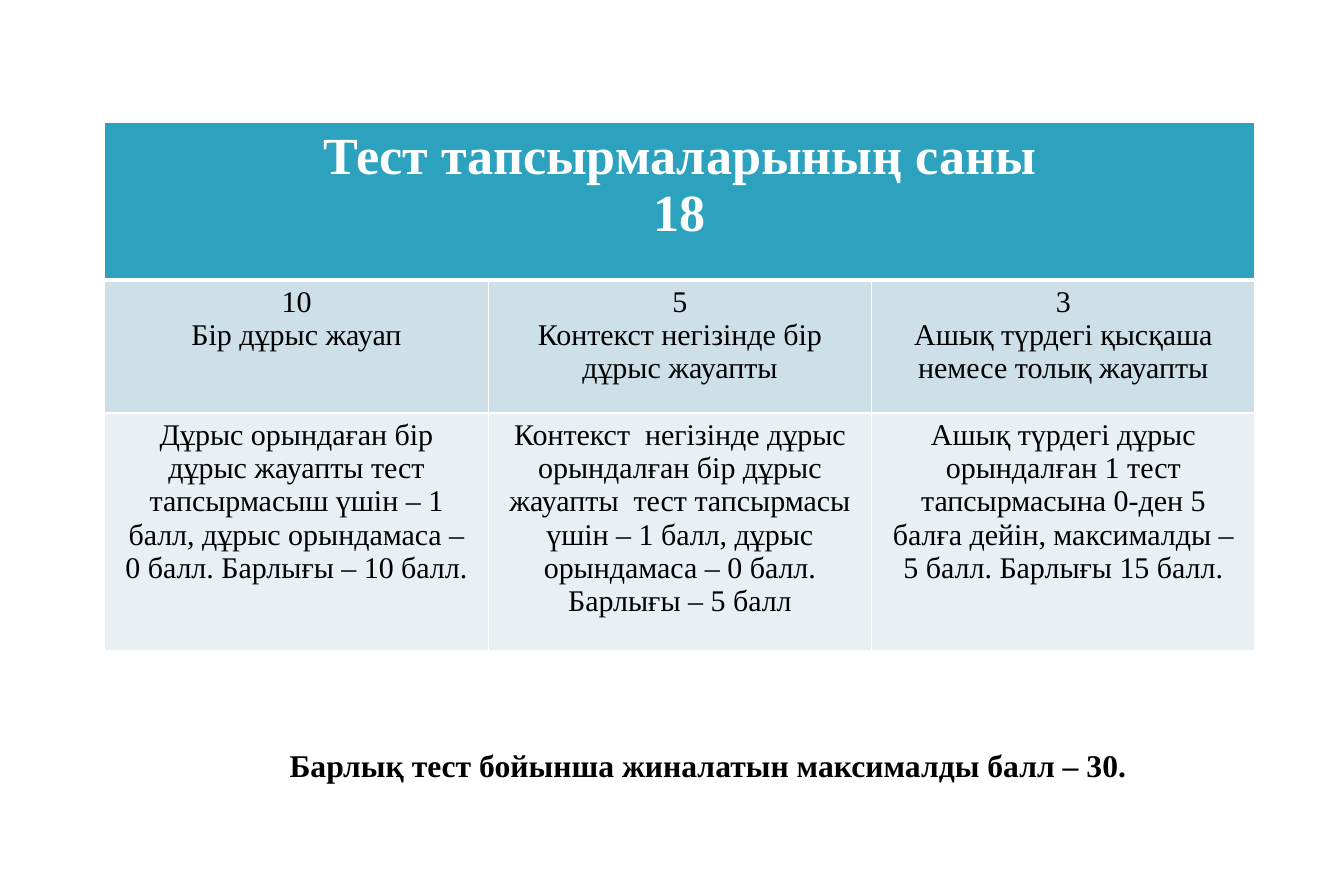
from lxml.etree import SubElement
from pptx import Presentation
from pptx.dml.color import RGBColor
from pptx.enum.text import MSO_ANCHOR, PP_ALIGN
from pptx.oxml.ns import qn
from pptx.util import Cm, Pt

WHITE = RGBColor(0xFF, 0xFF, 0xFF)
BLACK = RGBColor(0x00, 0x00, 0x00)
TEAL = RGBColor(0x2D, 0xA2, 0xBF)
LIGHT_BLUE = RGBColor(0xCD, 0xE0, 0xE8)
PALE_BLUE = RGBColor(0xE8, 0xF0, 0xF4)

HEADER_FONT = {"name": "Times New Roman", "size": Pt(33), "bold": True}
BODY_FONT = {"name": "Times New Roman", "size": Pt(19), "bold": False}
TOTAL_FONT = {"name": "Times New Roman", "size": Pt(20), "bold": True}

COLUMN_WIDTH = Cm(8.56)
ROW_HEIGHTS = [Cm(3.53), Cm(2.97), Cm(5.31)]
ROW_STYLES = [
    (TEAL, HEADER_FONT, WHITE),
    (LIGHT_BLUE, BODY_FONT, BLACK),
    (PALE_BLUE, BODY_FONT, BLACK),
]
ROWS = [
    ["Тест тапсырмаларының саны\n18", "", ""],
    [
        "10\nБір дұрыс жауап",
        "5\nКонтекст негізінде бір дұрыс жауапты",
        "3\nАшық түрдегі қысқаша немесе толық жауапты",
    ],
    [
        "Дұрыс орындаған бір дұрыс жауапты тест тапсырмасыш үшін – 1 балл, "
        "дұрыс орындамаса – 0 балл. Барлығы – 10 балл.",
        "Контекст  негізінде дұрыс орындалған бір дұрыс жауапты  тест тапсырмасы "
        "үшін – 1 балл, дұрыс орындамаса – 0 балл. Барлығы – 5 балл",
        "Ашық түрдегі дұрыс орындалған 1 тест тапсырмасына 0-ден 5 балға дейін, "
        "максималды – 5 балл. Барлығы 15 балл.",
    ],
]
TOTAL = "Барлық тест бойынша жиналатын максималды балл – 30."


def write_text(text_frame, text, font_values, color):
    text_frame.text = text
    text_frame.word_wrap = True
    for paragraph in text_frame.paragraphs:
        paragraph.alignment = PP_ALIGN.CENTER
        for run in paragraph.runs:
            for name, value in font_values.items():
                setattr(run.font, name, value)
            run.font.color.rgb = color


def set_borders(cell, top, bottom):
    """Draw white borders; top and bottom are line widths, the sides are 1 pt."""
    properties = cell._tc.get_or_add_tcPr()
    widths = {"a:lnL": Pt(1), "a:lnR": Pt(1), "a:lnT": top, "a:lnB": bottom}
    for position, (tag, width) in enumerate(widths.items()):
        line = SubElement(properties, qn(tag), w=str(int(width)))
        fill = SubElement(line, qn("a:solidFill"))
        SubElement(fill, qn("a:srgbClr"), val=str(WHITE))
        properties.insert(position, line)


def add_score_table(slide):
    table = slide.shapes.add_table(
        len(ROWS), len(ROWS[0]), Cm(2.34), Cm(2.72),
        COLUMN_WIDTH * len(ROWS[0]), sum(ROW_HEIGHTS),
    ).table
    for column in table.columns:
        column.width = COLUMN_WIDTH
    for row_index, (texts, style) in enumerate(zip(ROWS, ROW_STYLES)):
        fill_color, font_values, text_color = style
        table.rows[row_index].height = ROW_HEIGHTS[row_index]
        top = Pt(3) if row_index == 1 else Pt(1)
        bottom = Pt(3) if row_index == 0 else Pt(1)
        for cell, text in zip(table.rows[row_index].cells, texts):
            cell.margin_left = cell.margin_right = Cm(0.3)
            cell.margin_top = cell.margin_bottom = Cm(0.13)
            cell.fill.solid()
            cell.fill.fore_color.rgb = fill_color
            set_borders(cell, top, bottom)
            if text:
                write_text(cell.text_frame, text, font_values, text_color)
    table.cell(0, 0).merge(table.cell(0, len(ROWS[0]) - 1))


def add_total(slide):
    text_frame = slide.shapes.add_textbox(
        Cm(2.31), Cm(15.42), Cm(27), Cm(3.33)
    ).text_frame
    text_frame.vertical_anchor = MSO_ANCHOR.MIDDLE
    write_text(text_frame, TOTAL, TOTAL_FONT, BLACK)


def main():
    presentation = Presentation()
    presentation.slide_width = Pt(850.5)
    presentation.slide_height = Pt(567)
    slide = presentation.slides.add_slide(presentation.slide_layouts[6])
    add_total(slide)
    add_score_table(slide)
    presentation.save("out.pptx")


if __name__ == "__main__":
    main()
